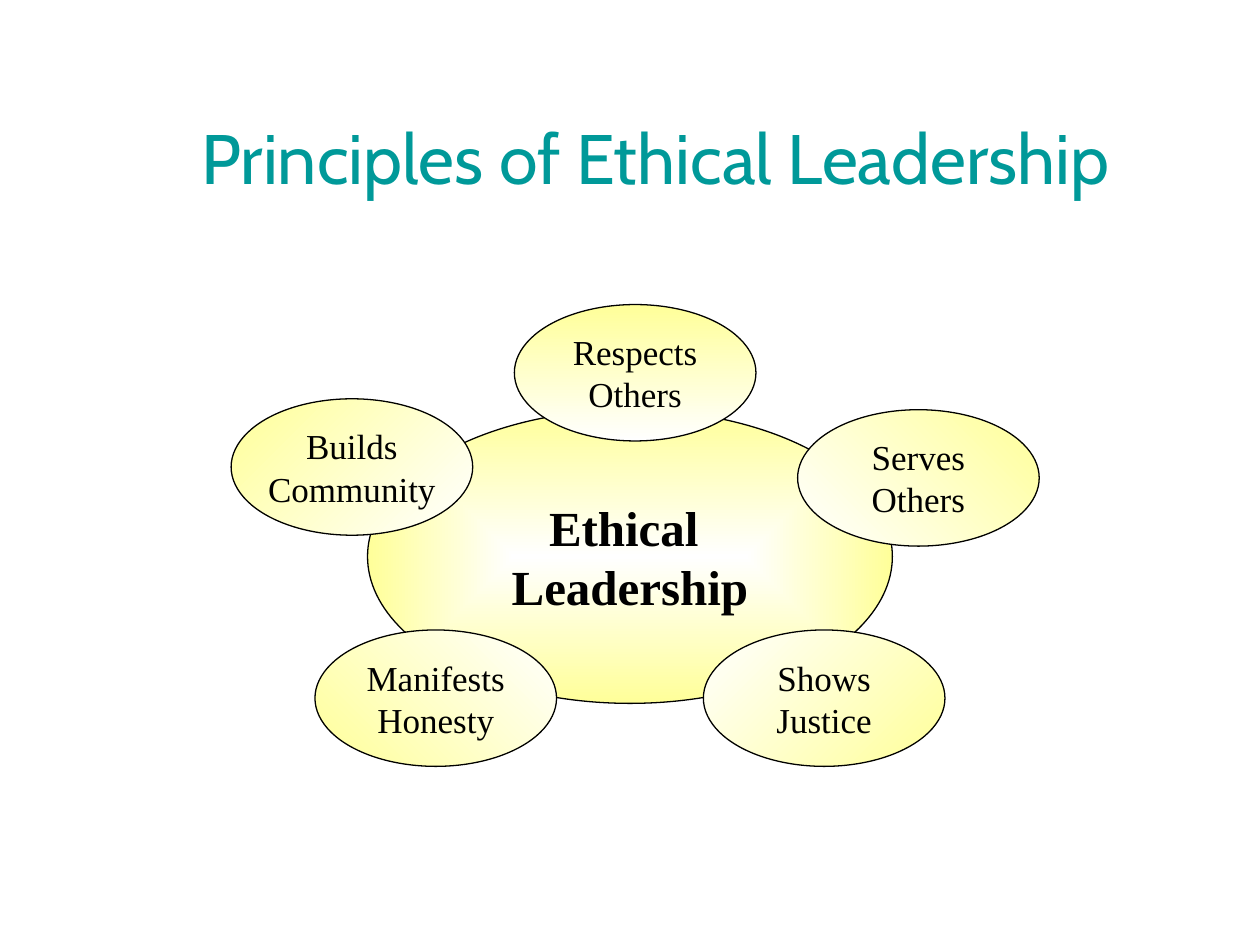
from dataclasses import dataclass
from typing import Optional

from lxml import etree
from pptx import Presentation
from pptx import util as u
from pptx.dml.color import RGBColor
from pptx.enum import shapes, text
from pptx.oxml.ns import qn

HUES = {"title": "009999", "ink": "000000", "pale": "FFFFFF", "warm": "FFFF99"}


@dataclass
class Oval:
    label: str
    left: float
    top: float
    start: str
    end: str
    angle: Optional[int]
    width: float = 4.87
    height: float = 2.75
    size: int = 20
    bold: bool = False


OVALS = [
    Oval("Ethical \nLeadership", 7.41, 8.26, "pale", "warm", None, 10.58, 5.92, 28, True),
    Oval("Respects\nOthers", 10.37, 6.14, "warm", "pale", 270),
    Oval("Builds\nCommunity", 4.66, 8.04, "warm", "pale", 315),
    Oval("Serves\nOthers", 16.08, 8.26, "pale", "warm", 45),
    Oval("Shows\nJustice", 14.18, 12.7, "pale", "warm", 315),
    Oval("Manifests\nHonesty", 6.35, 12.7, "warm", "pale", 45),
]


def tint(key: str) -> RGBColor:
    return RGBColor.from_string(HUES[key])


def write(frame, words: str, face: str, size: int, hue: str, bold: bool = False) -> None:
    frame.text = words
    frame.vertical_anchor = text.MSO_ANCHOR.MIDDLE
    for para in frame.paragraphs:
        para.alignment = text.PP_ALIGN.CENTER
        for run in para.runs:
            run.font.name = face
            run.font.size = u.Pt(size)
            run.font.bold = bold
            run.font.color.rgb = tint(hue)


def glow(shape) -> None:
    grad = shape.fill._xPr.find(qn("a:gradFill"))
    line = grad.find(qn("a:lin"))
    ring = etree.Element(qn("a:path"), path="shape")
    etree.SubElement(ring, qn("a:fillToRect"), l="50000", t="50000", r="50000", b="50000")
    grad.replace(line, ring)


def draw(slide, oval: Oval) -> None:
    box = [u.Cm(n) for n in (oval.left, oval.top, oval.width, oval.height)]
    shape = slide.shapes.add_shape(shapes.MSO_SHAPE.OVAL, *box)
    shape.shadow.inherit = False
    shape.fill.gradient()
    for stop, hue in zip(shape.fill.gradient_stops, (oval.start, oval.end)):
        stop.color.rgb = tint(hue)
    for stop, place in zip(shape.fill.gradient_stops, (0, 1)):
        stop.position = place
    if oval.angle is None:
        glow(shape)
    else:
        shape.fill.gradient_angle = oval.angle
    shape.line.color.rgb = tint("ink")
    shape.line.width = u.Pt(0.75)
    shape.text_frame.word_wrap = False
    write(shape.text_frame, oval.label, "Times New Roman", oval.size, "ink", oval.bold)


def main() -> None:
    deck = Presentation()
    deck.slide_width, deck.slide_height = u.Cm(25.4), u.Cm(19.05)
    slide = deck.slides.add_slide(deck.slide_layouts[5])
    title = slide.shapes.title
    title.left, title.top = u.Cm(1.78), u.Cm(1.57)
    title.width, title.height = u.Cm(22.86), u.Cm(3.18)
    title.text_frame.auto_size = text.MSO_AUTO_SIZE.NONE
    write(title.text_frame, "Principles of Ethical Leadership", "Cabin", 40, "title")
    for oval in OVALS:
        draw(slide, oval)
    deck.save("out.pptx")


if __name__ == "__main__":
    main()
